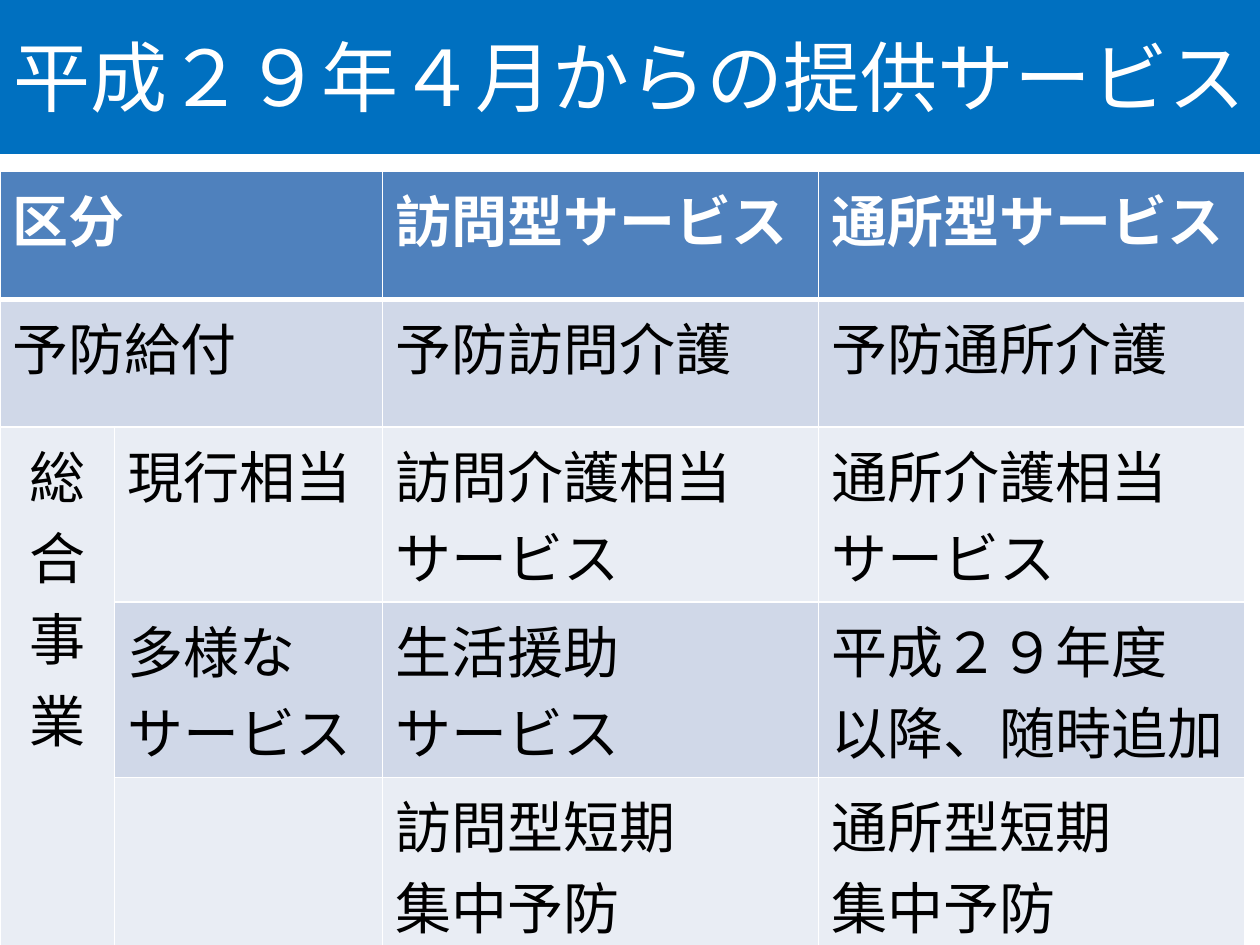
from lxml import etree
from pptx import Presentation
from pptx.dml.color import RGBColor
from pptx.enum.text import MSO_ANCHOR, MSO_AUTO_SIZE, PP_ALIGN
from pptx.oxml.ns import qn
from pptx.util import Pt

LEFT, CENTER = PP_ALIGN.LEFT, PP_ALIGN.CENTER
MIDDLE = MSO_ANCHOR.MIDDLE
NO_AUTOFIT = MSO_AUTO_SIZE.NONE
TITLE_ONLY = 5
FONT = "Calibri"
COLORS = {
    "banner": "0070C0",
    "header": "4F81BD",
    "odd": "D0D8E8",
    "even": "E9EDF4",
    "white": "FFFFFF",
    "text": "000000",
}
COLUMN_WIDTHS = [65.4, 153.2, 249.2, 243.8]
ROW_HEIGHTS = [73, 73, 80, 80, 96]
MERGES = [((0, 0), (0, 1)), ((1, 0), (1, 1)), ((2, 0), (4, 0))]
ROWS = [
    ["区分", "", "訪問型サービス", "通所型サービス"],
    ["予防給付", "", "予防訪問介護", "予防通所介護"],
    ["総\n合\n事\n業", "現行相当", "訪問介護相当サービス", "通所介護相当サービス"],
    ["", "多様なサービス", "生活援助\nサービス", "平成２９年度\n以降、随時追加"],
    ["", "", "訪問型短期\n集中予防", "通所型短期\n集中予防"],
]


def color(name):
    """Return the named palette colour."""
    return RGBColor.from_string(COLORS[name])


def format_paragraph(paragraph, size, color_name, bold, alignment):
    """Set the font and alignment of one paragraph."""
    paragraph.alignment = alignment
    paragraph.font.name = FONT
    paragraph.font.size = Pt(size)
    paragraph.font.bold = bold
    paragraph.font.color.rgb = color(color_name)


def set_borders(cell, bottom_width):
    """Draw white borders on all four sides of a cell."""
    properties = cell._tc.get_or_add_tcPr()
    widths = {"a:lnL": 1, "a:lnR": 1, "a:lnT": 1, "a:lnB": bottom_width}
    for tag, width in widths.items():
        line = etree.SubElement(properties, qn(tag), w=str(Pt(width)))
        fill = etree.SubElement(line, qn("a:solidFill"))
        etree.SubElement(fill, qn("a:srgbClr"), val=COLORS["white"])


def place_title(slide, left, top, width, height):
    """Turn the title placeholder into the banner."""
    title = slide.shapes.title
    title.left, title.top = Pt(left), Pt(top)
    title.width, title.height = Pt(width), Pt(height)
    title.fill.solid()
    title.fill.fore_color.rgb = color("banner")
    frame = title.text_frame
    frame.text = "平成２９年４月からの提供サービス"
    frame.auto_size = NO_AUTOFIT
    frame.vertical_anchor = MIDDLE
    format_paragraph(frame.paragraphs[0], 44, "white", False, CENTER)


def place_table(slide, left, top):
    """Place the service table with its merged cells."""
    table = slide.shapes.add_table(
        len(ROWS), len(COLUMN_WIDTHS), Pt(left), Pt(top),
        Pt(sum(COLUMN_WIDTHS)), Pt(sum(ROW_HEIGHTS)),
    ).table
    for column, width in zip(table.columns, COLUMN_WIDTHS):
        column.width = Pt(width)
    for row, height in zip(table.rows, ROW_HEIGHTS):
        row.height = Pt(height)
    for first, last in MERGES:
        table.cell(*first).merge(table.cell(*last))

    for row_index, texts in enumerate(ROWS):
        is_header = row_index == 0
        band = "header" if is_header else "odd" if row_index % 2 else "even"
        for column_index, text in enumerate(texts):
            cell = table.cell(row_index, column_index)
            set_borders(cell, 3 if is_header else 1)
            cell.fill.solid()
            cell.fill.fore_color.rgb = color(band)
            if not text:
                continue
            cell.text_frame.text = text
            is_category = row_index > 1 and column_index == 0
            for paragraph in cell.text_frame.paragraphs:
                format_paragraph(
                    paragraph, 32, "white" if is_header else "text",
                    is_header, CENTER if is_category else LEFT,
                )


def main():
    """Build and save the presentation."""
    presentation = Presentation()
    presentation.slide_width, presentation.slide_height = Pt(720), Pt(540)
    slide = presentation.slides.add_slide(presentation.slide_layouts[TITLE_ONLY])
    place_title(slide, 0, -2, 720, 90)
    place_table(slide, 0, 98)
    presentation.save("out.pptx")


if __name__ == "__main__":
    main()
